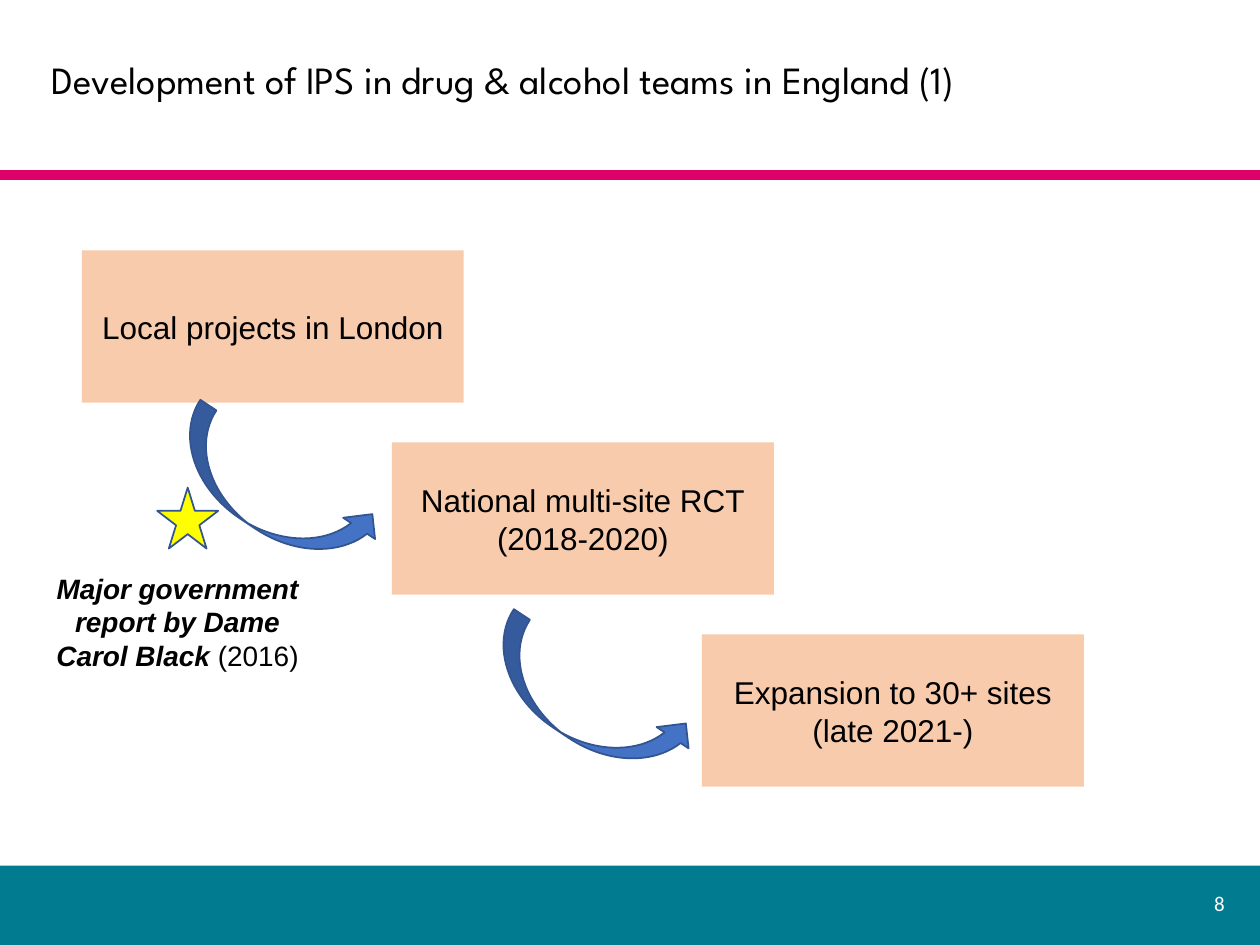
from dataclasses import dataclass
from typing import Any

from lxml.etree import SubElement
from pptx import Presentation
from pptx.dml.color import RGBColor
from pptx.enum.shapes import MSO_CONNECTOR, MSO_SHAPE
from pptx.enum.text import MSO_ANCHOR, MSO_AUTO_SIZE, PP_ALIGN
from pptx.oxml.ns import qn
from pptx.util import Cm, Pt


def rgb(value):
    return RGBColor.from_string(value)


@dataclass
class Deck:
    """Hold the slide style and draw elements on the current slide."""

    slide: Any
    font: str = "Arial"
    ink: str = "000000"
    outline: str = "325491"

    def text(self, sp, paragraphs, align=PP_ALIGN.CENTER, spacing=None, **base):
        tf = sp.text_frame
        frame = {"word_wrap": True, "auto_size": MSO_AUTO_SIZE.NONE,
                 "vertical_anchor": MSO_ANCHOR.MIDDLE}
        for name, value in frame.items():
            setattr(tf, name, value)
        for i, runs in enumerate(paragraphs):
            p = tf.add_paragraph() if i else tf.paragraphs[0]
            p.alignment = align
            p.line_spacing = spacing
            for content, extra in runs:
                r = p.add_run()
                r.text = content
                style = {"name": self.font, "color": self.ink, **base, **extra}
                r.font.color.rgb = rgb(style.pop("color"))
                for name, value in style.items():
                    setattr(r.font, name, value)

    def title(self, content, left, top, width, height, **style):
        sp = self.slide.shapes.title
        place = {"left": left, "top": top, "width": width, "height": height}
        for name, value in place.items():
            setattr(sp, name, Cm(value))
        self.text(sp, [[(content, {})]], PP_ALIGN.LEFT, 0.9, **style)

    def textbox(self, box, paragraphs, align=PP_ALIGN.CENTER, **style):
        sp = self.slide.shapes.add_textbox(*map(Cm, box))
        self.text(sp, paragraphs, align, **style)

    def shape(self, kind, box, fill, outlined=False, rotation=0):
        sp = self.slide.shapes.add_shape(kind, *map(Cm, box))
        sp.shadow.inherit = False
        sp.rotation = rotation
        sp.fill.solid()
        sp.fill.fore_color.rgb = rgb(fill)
        if outlined:
            sp.line.color.rgb = rgb(self.outline)
            sp.line.width = Pt(1)
        else:
            sp.line.fill.background()
        return sp

    def line(self, ends, color, width):
        cxn = self.slide.shapes.add_connector(MSO_CONNECTOR.STRAIGHT, *map(Cm, ends))
        cxn.line.color.rgb = rgb(color)
        cxn.line.width = Pt(width)
        SubElement(cxn._element.spPr, qn("a:effectLst"))


def main():
    prs = Presentation()
    prs.slide_width, prs.slide_height = Cm(25.4), Cm(19.05)
    s = prs.slides.add_slide(prs.slide_layouts[5])
    deck = Deck(s)

    deck.shape(MSO_SHAPE.RECTANGLE, (0, 17.45, 25.4, 1.6), "007B90")
    deck.line((25.8, 3.53, -1.5, 3.53), "DC026A", 6)
    deck.title("Development of IPS in drug & alcohol teams in England (1)",
               0.79, 0.58, 23.88, 2.13, name="League Spartan", size=Pt(22))
    deck.textbox((23.85, 17.7, 1.09, 1.02), [[("8", {})]], PP_ALIGN.RIGHT,
                 name="Calibri", size=Pt(12), color="FFFFFF")

    stages = [
        ["Local projects in London"],
        ["National multi-site RCT", "(2018-2020)"],
        ["Expansion to 30+ sites", "(late 2021-)"],
    ]
    for i, lines in enumerate(stages):
        box = (1.65 + 6.25 * i, 5.05 + 3.87 * i, 7.7, 3.07)
        sp = deck.shape(MSO_SHAPE.RECTANGLE, box, "F8CBAD")
        deck.text(sp, [[(content, {})] for content in lines], size=Pt(18))

    for i in range(len(stages) - 1):
        box = (3.23 + 6.32 * i, 9.19 + 4.22 * i, 4.55, 1.55)
        deck.shape(MSO_SHAPE.CURVED_UP_ARROW, box, "4472C4", True, 33.6)

    deck.shape(MSO_SHAPE.STAR_5_POINT, (3.17, 9.83, 1.23, 1.23), "FFFF00", True)
    report = [("Major government report by Dame Carol Black ",
               {"bold": True, "italic": True}), ("(2016)", {})]
    deck.textbox((0.76, 11, 5.64, 3.07), [report], size=Pt(16))

    prs.save("out.pptx")


if __name__ == "__main__":
    main()
